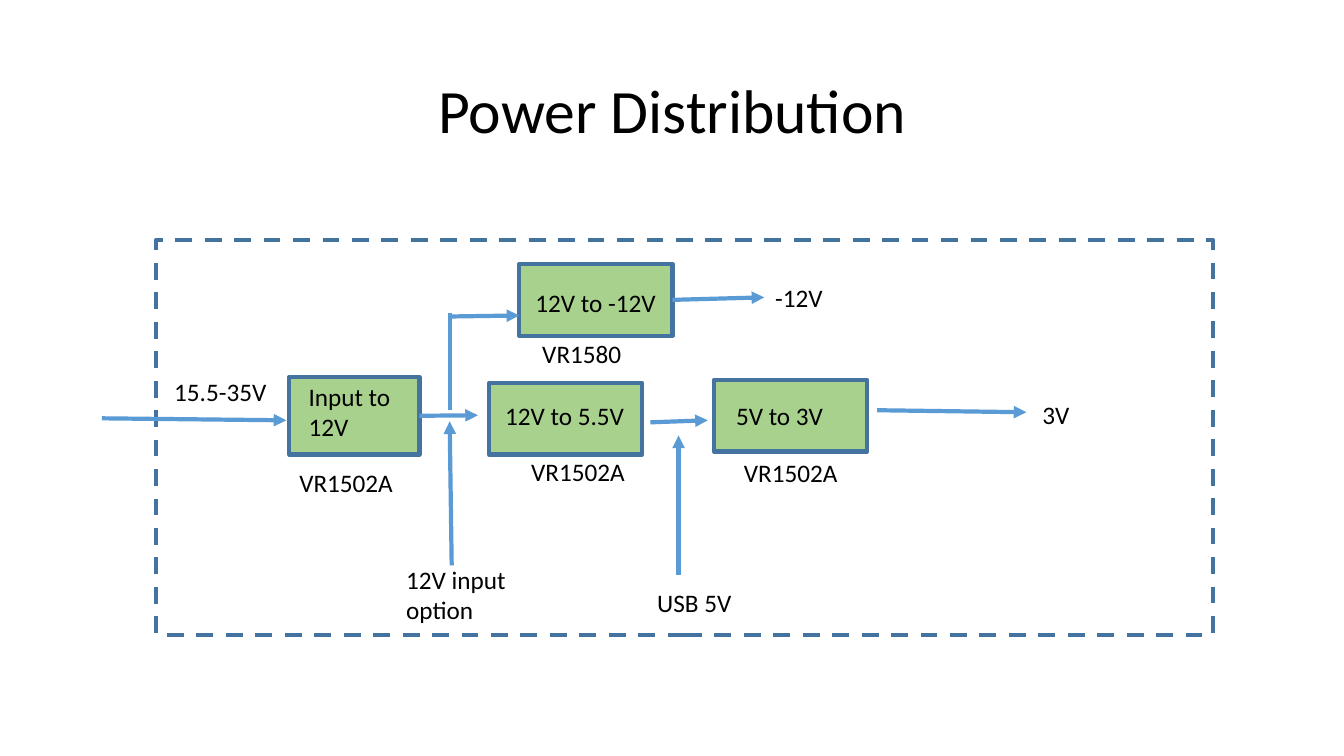
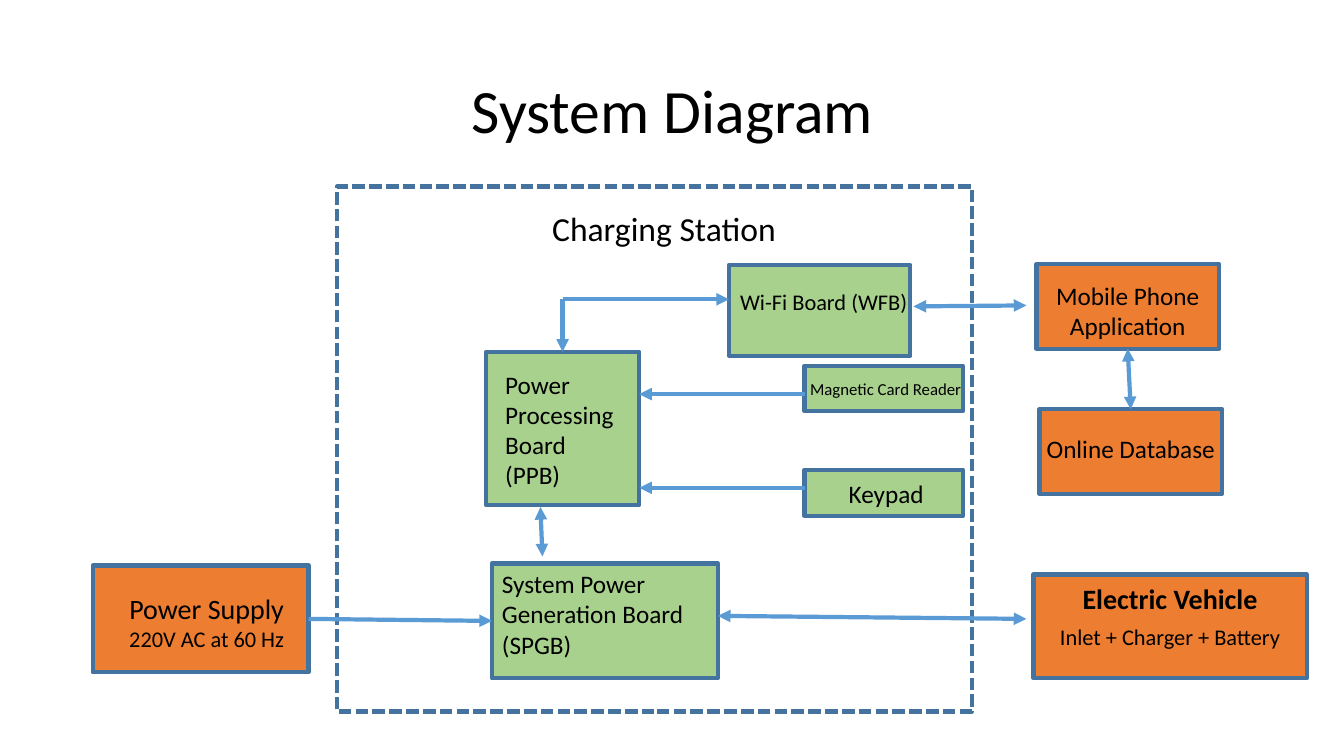
from pptx import Presentation
from pptx import util as u
from pptx.dml.color import RGBColor
from pptx.enum import dml, shapes, text
from pptx.oxml import ns, xmlchemy as xml

BLACK = RGBColor(0x00, 0x00, 0x00)
GREEN = RGBColor(0xA9, 0xD1, 0x8E)
ORANGE = RGBColor(0xED, 0x7D, 0x31)
NAVY = RGBColor(0x43, 0x73, 0x9E)
BLUE = RGBColor(0x5B, 0x9B, 0xD5)
FONT = "Calibri"
STROKE = u.Pt(3)
LEFT, CENTER = text.PP_ALIGN.LEFT, text.PP_ALIGN.CENTER
TOP, MIDDLE = text.MSO_ANCHOR.TOP, text.MSO_ANCHOR.MIDDLE
DASH = dml.MSO_LINE.DASH
DOTS = dml.MSO_LINE.SQUARE_DOT


def inches(*nums):
    return [u.Inches(num) for num in nums]


def put(frame, *lines, size=18, sizes=None, align=LEFT, anchor=TOP,
        inset=(0.1, 0.05, 0.1, 0.05), bold=(), gap=0, pitch=None):
    frame.word_wrap = True
    frame.vertical_anchor = anchor
    (frame.margin_left, frame.margin_top,
     frame.margin_right, frame.margin_bottom) = inches(*inset)
    for num, line in enumerate(lines):
        para = frame.add_paragraph() if num else frame.paragraphs[0]
        para.alignment = align
        para.space_before = u.Pt(gap if num else 0)
        if pitch:
            para.line_spacing = pitch
        run = para.add_run()
        run.text = line
        font = run.font
        font.name = FONT
        font.size = u.Pt(sizes[num] if sizes else size)
        font.bold = num in bold
        font.color.rgb = BLACK


def label(slide, line, at, **style):
    put(slide.shapes.add_textbox(*inches(*at)).text_frame, line, **style)


def box(slide, at, fill=None, dash=None):
    shape = slide.shapes.add_shape(shapes.MSO_SHAPE.RECTANGLE, *inches(*at))
    shape.shadow.inherit = False
    shape.line.color.rgb = NAVY
    shape.line.width = STROKE
    if dash:
        shape.line.dash_style = dash
    if fill is None:
        shape.fill.background()
    else:
        shape.fill.solid()
        shape.fill.fore_color.rgb = fill
    return shape


def block(slide, at, fill, *lines, left=0, top=0, right=0, **style):
    shape = box(slide, at, fill)
    put(shape.text_frame, *lines, inset=(left, top, right, 0), **style)
    return shape


def arrow(slide, start, end, ends=("tail",), source=None, target=None):
    wire = slide.shapes.add_connector(
        shapes.MSO_CONNECTOR.STRAIGHT, *inches(*start, *end))
    if source:
        wire.begin_connect(*source)
    if target:
        wire.end_connect(*target)
    wire.line.color.rgb = BLUE
    wire.line.width = STROKE
    stroke = wire.line._get_or_add_ln()
    for side in ends:
        tip = xml.OxmlElement(f"a:{side}End")
        tip.set("type", "triangle")
        stroke.append(tip)
    wire._element.spPr.append(xml.OxmlElement("a:effectLst"))


def page(deck, title):
    slide = deck.slides.add_slide(deck.slide_layouts[5])
    put(slide.shapes.title.text_frame, title, size=44, align=CENTER,
        anchor=MIDDLE, pitch=0.9)
    return slide


def power(deck):
    slide = page(deck, "Power Distribution")
    box(slide, (1.55, 2.38, 10.48, 3.92), dash=DASH)
    feed = block(slide, (2.87, 3.74, 1.29, 0.77), GREEN, "Input to 12V",
                 left=0.19, top=0.04)
    wide, high = 1.52, 0.71
    block(slide, (4.85, 3.8, wide, high), GREEN, "12V to 5.5V",
          left=0.16, top=0.17)
    block(slide, (7.08, 3.77, wide, high), GREEN, "5V to 3V",
          left=0.22, top=0.2)
    minus = block(slide, (5.15, 2.62, wide, high), GREEN, "12V to -12V",
                  left=0.16, top=0.23)

    for line, x, y in (
        ("15.5-35V", 1.63, 3.68), ("-12V", 7.59, 2.75),
        ("USB 5V", 6.42, 5.78), ("3V", 10.24, 3.91),
        ("VR1502A", 2.87, 4.59), ("VR1502A", 7.28, 4.49),
        ("VR1502A", 5.17, 4.48), ("VR1580", 5.28, 3.31),
    ):
        label(slide, line, (x, y, 1.63, 0.4))
    label(slide, "12V input option", (3.93, 5.55, 1.63, 0.71))

    for start, end in (
        ((1.01, 4.15), (2.84, 4.17)), ((6.45, 4.19), (7.02, 4.17)),
        ((6.73, 5.7), (6.73, 4.32)), ((4.48, 5.61), (4.46, 4.18)),
        ((8.7, 4.07), (10.18, 4.09)), ((4.46, 3.14), (5.15, 3.13)),
    ):
        arrow(slide, start, end)
    arrow(slide, (4.46, 4.07), (4.46, 3.11), ends=())
    arrow(slide, (4.16, 4.13), (4.74, 4.12), source=(feed, 3))
    arrow(slide, (6.67, 2.97), (7.58, 2.95), source=(minus, 3))


def system(deck):
    slide = page(deck, "System Diagram")
    box(slide, (3.34, 1.85, 6.3, 5.21), dash=DOTS)
    label(slide, "Charging Station", (4.21, 2.01, 4.75, 0.5),
          size=24, align=CENTER)
    supply = block(slide, (0.92, 5.61, 2.14, 1.06), ORANGE,
                   "Power Supply", "220V AC at 60 Hz", sizes=(20, 16),
                   align=CENTER, left=0.12, top=0.26)
    block(slide, (7.23, 2.63, 1.8, 0.9), GREEN, "Wi-Fi Board (WFB)",
          size=16, align=CENTER, left=0.08, top=0.23)
    block(slide, (10.25, 5.7, 2.71, 1.03), ORANGE,
          "Electric Vehicle", "Inlet + Charger + Battery", sizes=(20, 16),
          align=CENTER, top=0.07, bold=(0,), gap=6)
    brain = block(slide, (4.82, 3.49, 1.52, 1.52), GREEN,
                  "Power Processing Board (PPB)",
                  left=0.19, top=0.17, right=0.18)
    board = block(slide, (4.88, 5.59, 2.24, 1.14), GREEN,
                  "System Power Generation Board (SPGB)", left=0.1, top=0.05)
    block(slide, (7.98, 4.66, 1.57, 0.46), GREEN, "Keypad",
          align=CENTER, left=0.05, top=0.09)
    block(slide, (7.98, 3.63, 1.57, 0.45), GREEN, "Magnetic Card Reader",
          size=12, align=CENTER, left=0.04, top=0.13)
    phone = block(slide, (10.28, 2.62, 1.81, 0.84), ORANGE,
                  "Mobile Phone Application", align=CENTER, top=0.16)
    data = block(slide, (10.31, 4.06, 1.81, 0.84), ORANGE,
                 "Online Database", align=CENTER, top=0.24)

    both = ("head", "tail")
    arrow(slide, (3.06, 6.14), (4.88, 6.16),
          source=(supply, 3), target=(board, 1))
    arrow(slide, (5.36, 5.03), (5.38, 5.52), both)
    arrow(slide, (7.12, 6.11), (10.18, 6.14), both)
    arrow(slide, (5.58, 2.97), (7.23, 2.97))
    arrow(slide, (5.58, 2.97), (5.58, 3.49), target=(brain, 0))
    arrow(slide, (9.06, 3.04), (10.18, 3.03), both)
    arrow(slide, (7.98, 4.84), (6.34, 4.84))
    arrow(slide, (7.98, 3.91), (6.34, 3.91))
    arrow(slide, (11.18, 3.46), (11.21, 4.06), both,
          source=(phone, 2), target=(data, 0))


def main():
    deck = Presentation()
    deck.slide_width, deck.slide_height = inches(13.33, 7.5)
    title = deck.slide_layouts[5].placeholders[0]
    title.left, title.top, title.width, title.height = inches(
        0.92, 0.4, 11.5, 1.45)
    power(deck)
    system(deck)
    deck.save("out.pptx")


if __name__ == "__main__":
    main()
